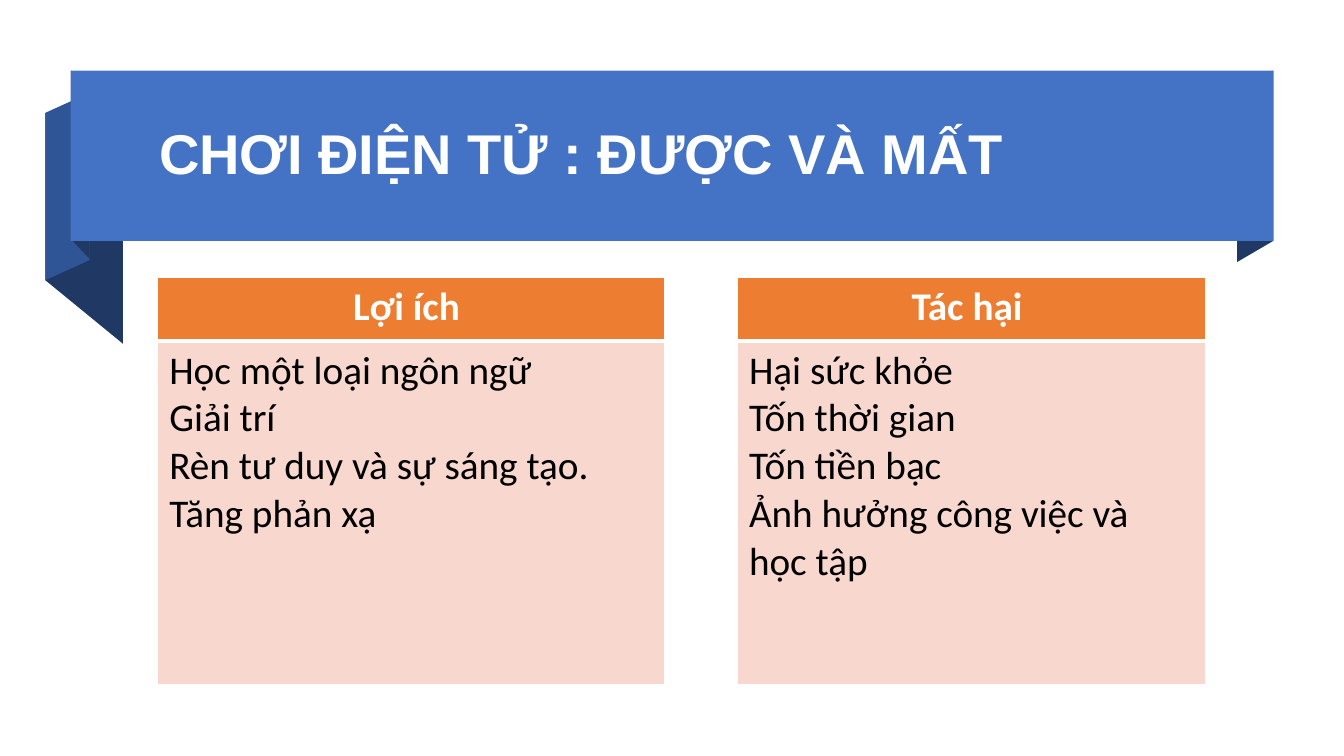
"""Build a slide with a folded title ribbon above a two-sided comparison table."""
from dataclasses import dataclass

import lxml.etree
import pptx
import pptx.dml.color
import pptx.enum.shapes
import pptx.enum.text
import pptx.oxml.ns
import pptx.presentation
import pptx.shapes.group
import pptx.slide
import pptx.table
import pptx.util

SLIDE_WIDTH = pptx.util.Inches(13.33)
SLIDE_HEIGHT = pptx.util.Inches(7.5)
GRID_COLUMNS = 133.3
GRID_ROWS = 75
WHITE = "FFFFFF"
BLUE = "4472C4"
MID_BLUE = "2F5597"
NAVY = "203864"
ORANGE = "ED7D31"
PEACH = "F8D7CE"
BLACK = "000000"


@dataclass(frozen=True)
class Fold:
    """A slanted ribbon face: two upright edges of equal height."""

    left: float
    left_top: float
    right: float
    right_top: float
    height: float
    colour: str


@dataclass(frozen=True)
class Side:
    """One side of the comparison and the table column it fills."""

    column: int
    heading: str
    points: tuple[str, ...]


FOLDS = (
    Fold(122.7, 9.1, 126.3, 7, 16.9, NAVY),
    Fold(4.5, 11.2, 12.2, 17.5, 16.6, NAVY),
    Fold(4.5, 11.2, 8.9, 9.2, 16.6, MID_BLUE),
    Fold(7.1, 7, 8.9, 8.9, 16.8, NAVY),
)
SIDES = (
    Side(0, "Lợi ích ", (
        "Học một loại ngôn ngữ",
        "Giải trí",
        "Rèn tư duy và sự sáng tạo.",
        "Tăng phản xạ",
    )),
    Side(2, "Tác hại ", (
        "Hại sức khỏe",
        "Tốn thời gian",
        "Tốn tiền bạc",
        "Ảnh hưởng công việc và học tập",
    )),
)
COLUMN_WIDTHS = (50.3, 7.2, 46.5)
ROW_HEIGHTS = (6.3, 34.1)


def columns(count: float) -> int:
    """Return the width of a number of grid columns."""
    return round(SLIDE_WIDTH * count / GRID_COLUMNS)


def rows(count: float) -> int:
    """Return the height of a number of grid rows."""
    return round(SLIDE_HEIGHT * count / GRID_ROWS)


def paint(target, colour: str) -> None:
    """Give a shape, cell or font a solid fill."""
    target.fill.solid()
    target.fill.fore_color.rgb = pptx.dml.color.RGBColor.from_string(colour)


def finish(shape, colour: str) -> None:
    """Fill a shape and remove its outline and shadow."""
    paint(shape, colour)
    shape.line.fill.background()
    shape.shadow.inherit = False


def add_span(para, text: str, size: float, face: str, colour: str, bold: bool) -> None:
    """Add one formatted run to a paragraph."""
    span = para.add_run()
    span.text = text
    span.font.size = pptx.util.Pt(size)
    span.font.name = face
    span.font.bold = bold
    paint(span.font, colour)


def add_fold(ribbon: pptx.shapes.group.GroupShape, fold: Fold) -> None:
    """Draw one slanted face of the ribbon."""
    corners = [
        (columns(column), rows(row))
        for column, row in (
            (fold.left, fold.left_top),
            (fold.right, fold.right_top),
            (fold.right, fold.right_top + fold.height),
            (fold.left, fold.left_top + fold.height),
        )
    ]
    outline = ribbon.shapes.build_freeform(*corners[0])
    outline.add_line_segments(corners[1:], close=True)
    finish(outline.convert_to_shape(), fold.colour)


def add_ribbon(page: pptx.slide.Slide) -> None:
    """Draw the folded ribbon with its front band."""
    ribbon = page.shapes.add_group_shape()
    for fold in FOLDS:
        add_fold(ribbon, fold)
    band = ribbon.shapes.add_shape(
        pptx.enum.shapes.MSO_SHAPE.RECTANGLE,
        columns(7), rows(7), columns(119.3), rows(16.9),
    )
    finish(band, BLUE)


def add_title(page: pptx.slide.Slide) -> None:
    """Write the title on the ribbon."""
    box = page.shapes.add_textbox(columns(14.8), rows(8.3), columns(109.4), rows(14.5))
    box.text_frame.word_wrap = True
    box.text_frame.vertical_anchor = pptx.enum.text.MSO_ANCHOR.MIDDLE
    para = box.text_frame.paragraphs[0]
    para.line_spacing = 0.9
    add_span(para, "CHƠI ĐIỆN TỬ : ĐƯỢC VÀ MẤT", 40, "Arial", WHITE, True)


def set_borders(cell, top: float, bottom: float) -> None:
    """Give a cell white borders, with the top and bottom widths in points."""
    properties = cell._tc.get_or_add_tcPr()
    for edge, width in (("L", 1), ("R", 1), ("T", top), ("B", bottom)):
        line = lxml.etree.SubElement(
            properties, pptx.oxml.ns.qn(f"a:ln{edge}"), w=str(pptx.util.Pt(width))
        )
        fill = lxml.etree.SubElement(line, pptx.oxml.ns.qn("a:solidFill"))
        lxml.etree.SubElement(fill, pptx.oxml.ns.qn("a:srgbClr"), val=WHITE)


def fill_side(table: pptx.table.Table, side: Side) -> None:
    """Write the heading and the points of one side."""
    heading, body = (table.cell(row, side.column) for row in range(2))
    for cell, colour in ((heading, ORANGE), (body, PEACH)):
        paint(cell, colour)
        cell.margin_left = cell.margin_right = columns(1.2)
        cell.margin_top = cell.margin_bottom = rows(0.6)
    para = heading.text_frame.paragraphs[0]
    para.alignment = pptx.enum.text.PP_ALIGN.CENTER
    add_span(para, side.heading, 28, "Calibri", WHITE, True)
    for index, point in enumerate(side.points):
        frame = body.text_frame
        para = frame.add_paragraph() if index else frame.paragraphs[0]
        add_span(para, point, 28, "Calibri", BLACK, False)


def add_comparison(page: pptx.slide.Slide) -> None:
    """Draw the comparison table."""
    table = page.shapes.add_table(
        len(ROW_HEIGHTS), len(COLUMN_WIDTHS), columns(15.6), rows(27.5),
        columns(sum(COLUMN_WIDTHS)), rows(sum(ROW_HEIGHTS)),
    ).table
    table.horz_banding = False
    for column, width in zip(table.columns, COLUMN_WIDTHS):
        column.width = columns(width)
    for index, height in enumerate(ROW_HEIGHTS):
        table.rows[index].height = rows(height)
        for cell in table.rows[index].cells:
            set_borders(cell, top=3 if index else 1, bottom=1 if index else 3)
            paint(cell, WHITE)
    for side in SIDES:
        fill_side(table, side)


def main() -> None:
    """Build and save the deck."""
    deck = pptx.Presentation()
    deck.slide_width = SLIDE_WIDTH
    deck.slide_height = SLIDE_HEIGHT
    page = deck.slides.add_slide(deck.slide_layouts[6])
    add_ribbon(page)
    add_title(page)
    add_comparison(page)
    deck.save("out.pptx")


if __name__ == "__main__":
    main()
